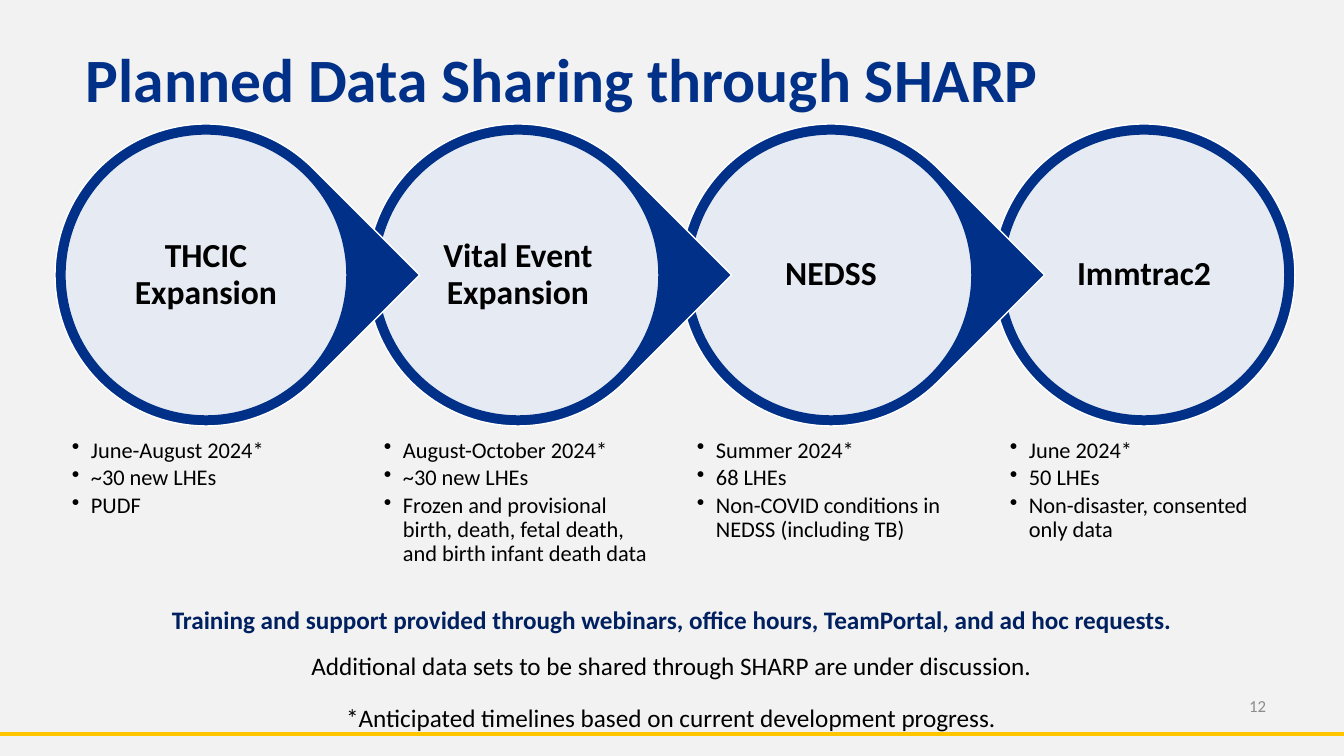
from lxml import etree
from pptx import Presentation, util as u
from pptx.dml.color import RGBColor
from pptx.enum import shapes, text
from pptx.oxml.ns import qn

PX = 12700 * 72 / 100.8
HUE = {"back": "F2F2F2", "blue": "003087", "navy": "002060", "gold": "FFC600",
       "white": "FFFFFF", "black": "000000", "gray": "8C8C8C"}
KIND = shapes.MSO_SHAPE
LEFT, MID, RIGHT = text.PP_ALIGN.LEFT, text.PP_ALIGN.CENTER, text.PP_ALIGN.RIGHT


def write(box, lines, size, hue, bold=False, align=LEFT, inset=None, bullet=False,
          anchor=text.MSO_ANCHOR.TOP, lead=None):
    area = slide.shapes.add_textbox(*[round(n * PX) for n in box])
    frame = area.text_frame
    frame.word_wrap = True
    frame.vertical_anchor = anchor
    if inset is not None:
        frame.margin_left = frame.margin_right = round(inset * PX)
        frame.margin_top = frame.margin_bottom = round(inset * PX)
    frame.text = "\n".join(lines)
    for para in frame.paragraphs:
        para.alignment = align
        if lead:
            para.line_spacing = lead
        if bullet:
            para.space_after = u.Pt(2.4)
            props = para._p.get_or_add_pPr()
            props.set("marL", str(round(19 * PX)))
            props.set("indent", str(round(-19 * PX)))
            etree.SubElement(props, qn("a:buChar")).set("char", "•")
        for run in para.runs:
            run.font.name = "Calibri"
            run.font.size = u.Pt(size)
            run.font.bold = bold
            run.font.color.rgb = RGBColor.from_string(HUE[hue])


def draw(kind, box, fill, line):
    shape = slide.shapes.add_shape(kind, *[round(n * PX) for n in box])
    shape.shadow.inherit = False
    shape.fill.solid()
    shape.fill.fore_color.rgb = RGBColor.from_string(HUE[fill])
    shape.line.color.rgb = RGBColor.from_string(HUE[line])
    shape.line.width = u.Pt(1)
    return shape


deck = Presentation()
deck.slide_width = round(1344 * PX)
deck.slide_height = round(756 * PX)
slide = deck.slides.add_slide(deck.slide_layouts[6])
slide.background.fill.solid()
slide.background.fill.fore_color.rgb = RGBColor.from_string(HUE["back"])

rule = slide.shapes.add_connector(shapes.MSO_CONNECTOR.STRAIGHT, 0, round(734 * PX),
                                  deck.slide_width, round(734 * PX))
rule.line.color.rgb = RGBColor.from_string(HUE["gold"])
rule.line.width = u.Pt(3)
etree.SubElement(rule._element.spPr, qn("a:effectLst"))
write((1228, 686, 48, 40), ["12"], 12, "gray", align=RIGHT, anchor=text.MSO_ANCHOR.MIDDLE)

steps = [
    ("THCIC Expansion", ["June-August 2024*", "~30 new LHEs", "PUDF"]),
    ("Vital Event Expansion", ["August-October 2024*", "~30 new LHEs",
     "Frozen and provisional birth, death, fetal death, and birth infant death data"]),
    ("NEDSS", ["Summer 2024*", "68 LHEs", "Non-COVID conditions in NEDSS (including TB)"]),
    ("Immtrac2", ["June 2024*", "50 LHEs", "Non-disaster, consented only data"]),
]
last = len(steps) - 1
for i in range(last, -1, -1):
    name, facts = steps[i]
    left = 55 + 938 * i // last
    ring = draw(KIND.OVAL if i == last else KIND.TEAR, (left, 124, 302, 302), "blue", "white")
    if i < last:
        ring.adjustments[0] = 1
        ring.rotation = 45
    disc = draw(KIND.OVAL, (left + 10, 134, 282, 282), "white", "blue")
    tint = disc.fill._xPr.find(".//" + qn("a:srgbClr"))
    etree.SubElement(tint, qn("a:alpha")).set("val", "90000")
    write((left + 51, 175, 200, 200), [name], 24, "black", True, MID, 3,
          anchor=text.MSO_ANCHOR.MIDDLE, lead=0.9)
    write((left + 10, 432, 282, 166), facts, 16, "black", inset=7, bullet=True, lead=0.9)

write((76, 36, 992, 85), ["Planned Data Sharing through SHARP"], 44, "blue", True)
notes = [
    ((137, 599, 1070, 40), "navy", True,
     "Training and support provided through webinars, office hours, TeamPortal, and ad hoc requests."),
    ((215, 645, 913, 40), "black", False,
     "Additional data sets to be shared through SHARP are under discussion."),
    ((264, 697, 814, 40), "black", False,
     "*Anticipated timelines based on current development progress."),
]
for box, hue, bold, line in notes:
    write(box, [line], 18, hue, bold, MID)

deck.save("out.pptx")
